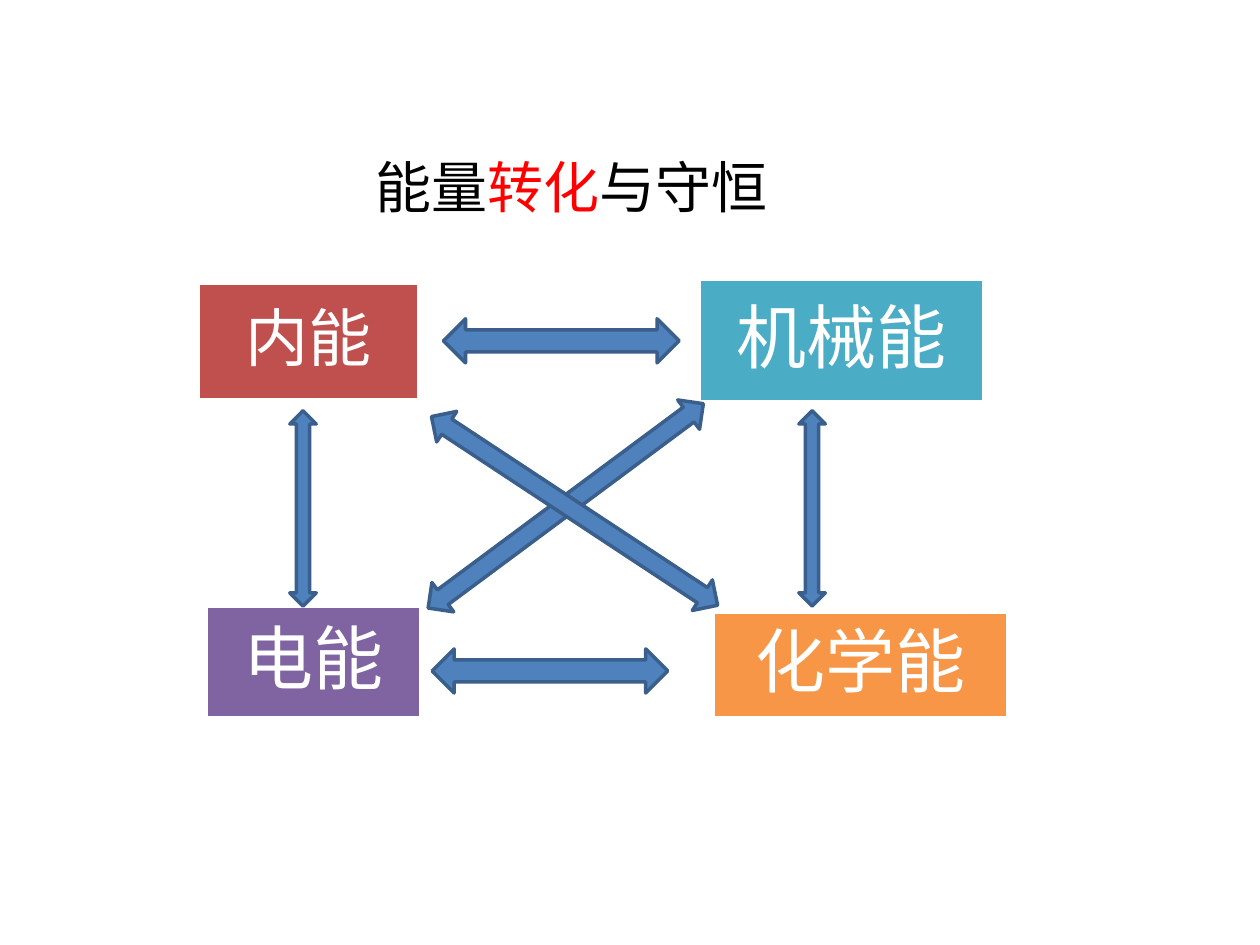
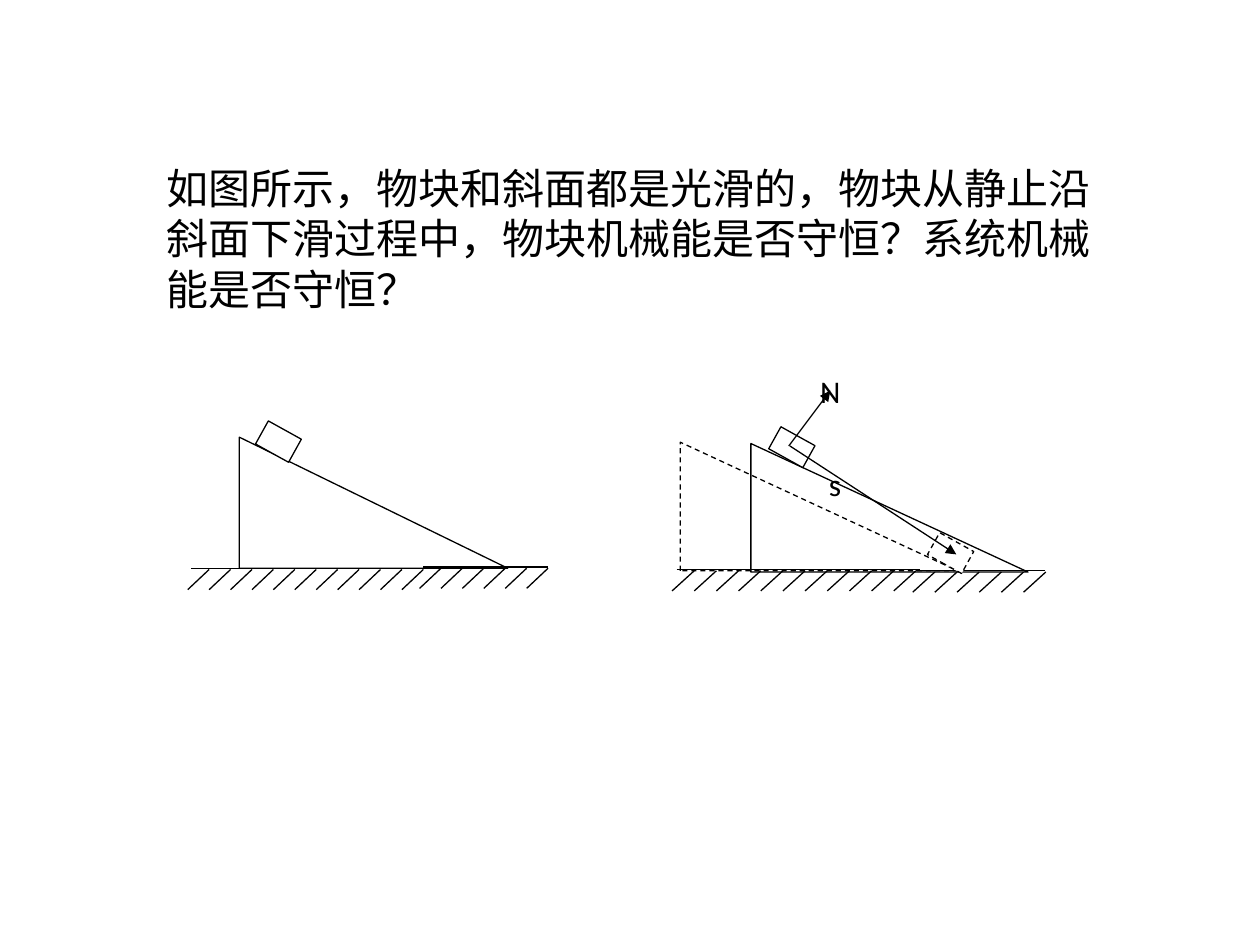
from dataclasses import dataclass

from lxml import etree
from pptx import Presentation
from pptx import util as u
from pptx.dml.color import RGBColor
from pptx.enum import dml, shapes, text
from pptx.oxml.ns import qn


@dataclass(frozen=True)
class Theme:
    font: str = "Calibri"
    white: str = "FFFFFF"
    black: str = "000000"
    accent: str = "FF0000"
    red: str = "C0504D"
    purple: str = "8064A2"
    teal: str = "4BACC6"
    orange: str = "F79646"
    blue: str = "4F81BD"
    dark_blue: str = "3A5F8C"
    title: int = 32
    question: int = 24
    label: int = 18
    thick: float = 2
    thin: float = 0.75


theme = Theme()
Shape = shapes.MSO_SHAPE


def add_figure(parent, kind, bounds, fill, line, width, rotation=0, dashed=False):
    figure = parent.shapes.add_shape(kind, *map(u.Inches, bounds))
    figure.shadow.inherit = False
    figure.rotation = rotation
    if fill:
        figure.fill.solid()
        figure.fill.fore_color.rgb = RGBColor.from_string(fill)
    else:
        figure.fill.background()
    figure.line.color.rgb = RGBColor.from_string(line)
    figure.line.width = u.Pt(width)
    if dashed:
        figure.line.dash_style = dml.MSO_LINE.DASH
    return figure


def add_line(parent, start, end, arrow=False):
    line = parent.shapes.add_connector(
        shapes.MSO_CONNECTOR.STRAIGHT, *map(u.Inches, (*start, *end)))
    line.line.color.rgb = RGBColor.from_string(theme.black)
    line.line.width = u.Pt(theme.thin)
    if arrow:
        etree.SubElement(line.line._get_or_add_ln(), qn("a:tailEnd"), type="triangle")
    etree.SubElement(line._element.spPr, qn("a:effectLst"))


deck = Presentation()
deck.slide_width, deck.slide_height = u.Inches(10), u.Inches(7.5)
energy_page, incline_page = (
    deck.slides.add_slide(deck.slide_layouts[6]) for _ in range(2))

# Slide 1: four forms of energy and the conversions between them
energies = [
    ("内能", (1.57, 2.25, 1.75, 0.92), theme.red, 36),
    ("电能", (1.64, 4.81, 1.7, 0.89), theme.purple, 40),
    ("机械能", (5.55, 2.22, 2.26, 0.97), theme.teal, 40),
    ("化学能", (5.66, 4.86, 2.34, 0.84), theme.orange, 40),
]
for name, bounds, fill, size in energies:
    box = add_figure(energy_page, Shape.RECTANGLE, bounds, fill, theme.white, theme.thick)
    frame = box.text_frame
    frame.word_wrap = True
    frame.vertical_anchor = text.MSO_ANCHOR.MIDDLE
    frame.margin_left = frame.margin_right = u.Inches(0.27)
    frame.margin_top = frame.margin_bottom = u.Inches(0.27)
    frame.text = name
    para = frame.paragraphs[0]
    para.alignment = text.PP_ALIGN.CENTER
    para.line_spacing = 0.9
    para.space_after = u.Pt(0.35 * size)
    span = para.runs[0]
    span.font.name = theme.font
    span.font.size = u.Pt(size)
    span.font.color.rgb = RGBColor.from_string(theme.white)

conversions = [
    ((3.52, 2.53, 1.87, 0.35), 0),
    ((3.43, 5.15, 1.87, 0.35), 0),
    ((1.63, 3.93, 1.55, 0.21), 270),
    ((5.67, 3.93, 1.55, 0.21), 270),
    ((3.13, 3.87, 2.72, 0.29), 323.4),
    ((3.2, 3.91, 2.72, 0.29), 33.4),
]
for bounds, rotation in conversions:
    add_figure(energy_page, Shape.LEFT_RIGHT_ARROW, bounds, theme.blue,
               theme.dark_blue, theme.thick, rotation)

# Slide 2: a block on an incline, before and during the slide
# Each ground: start, end, height, first hatch, hatch count
inclines = [
    ((1.9, 3.47, 2.13, 1.04), (2.06, 3.4, 0.3, 0.21), 0.17,
     [(3.36, 4.35, 4.5, 3.5, 6), (1.52, 3.38, 4.51, 1.66, 11)]),
    ((5.96, 3.52, 2.2, 1.02), (6.13, 3.45, 0.31, 0.2), 0.176,
     [(7.27, 8.29, 4.53, 7.42, 6), (5.37, 7.3, 4.52, 5.51, 11)]),
]
for wedge, block, step, grounds in inclines:
    diagram = incline_page.shapes.add_group_shape()
    add_figure(diagram, Shape.RIGHT_TRIANGLE, wedge, theme.white, theme.black, theme.thin)
    add_figure(diagram, Shape.RECTANGLE, block, theme.white, theme.black, theme.thin, 29)
    for left, right, level, first, count in grounds:
        for index in range(count):
            top = first + index * step
            add_line(diagram, (top, level + 0.01), (top - step, level + 0.17))
        add_line(diagram, (left, level), (right, level))

# The last diagram also shows the moved wedge and block, the path and the force
add_figure(diagram, Shape.RIGHT_TRIANGLE, (5.4, 3.51, 2.2, 1.02), None,
           theme.black, theme.thin, dashed=True)
add_figure(diagram, Shape.RECTANGLE, (7.39, 4.29, 0.31, 0.2), theme.white,
           theme.black, theme.thin, 29, dashed=True)
add_line(diagram, (6.27, 3.54), (7.59, 4.4), arrow=True)
add_line(diagram, (6.26, 3.54), (6.59, 3.1), arrow=True)

# Text on both slides
question = ("如图所示，物块和斜面都是光滑的，物块从静止沿斜面下滑过程中，"
            "物块机械能是否守恒？系统机械能是否守恒？")
captions = [
    (energy_page, (2.88, 1.16, 3.46, 0.64), theme.title,
     [("能量", theme.black), ("转化", theme.accent), ("与守恒", theme.black)]),
    (incline_page, (1.22, 1.24, 7.56, 1.31), theme.question, [(question, theme.black)]),
    (diagram, (6.41, 2.9, 0.91, 0.7), theme.label, [("N", theme.black)]),
    (diagram, (6.48, 3.64, 0.91, 0.7), theme.label, [("s", theme.black)]),
]
for parent, bounds, size, parts in captions:
    frame = parent.shapes.add_textbox(*map(u.Inches, bounds)).text_frame
    frame.word_wrap = True
    if parent is not diagram:
        frame.auto_size = text.MSO_AUTO_SIZE.SHAPE_TO_FIT_TEXT
    for words, color in parts:
        span = frame.paragraphs[0].add_run()
        span.text = words
        span.font.name = theme.font
        span.font.size = u.Pt(size)
        span.font.color.rgb = RGBColor.from_string(color)

deck.save("out.pptx")
